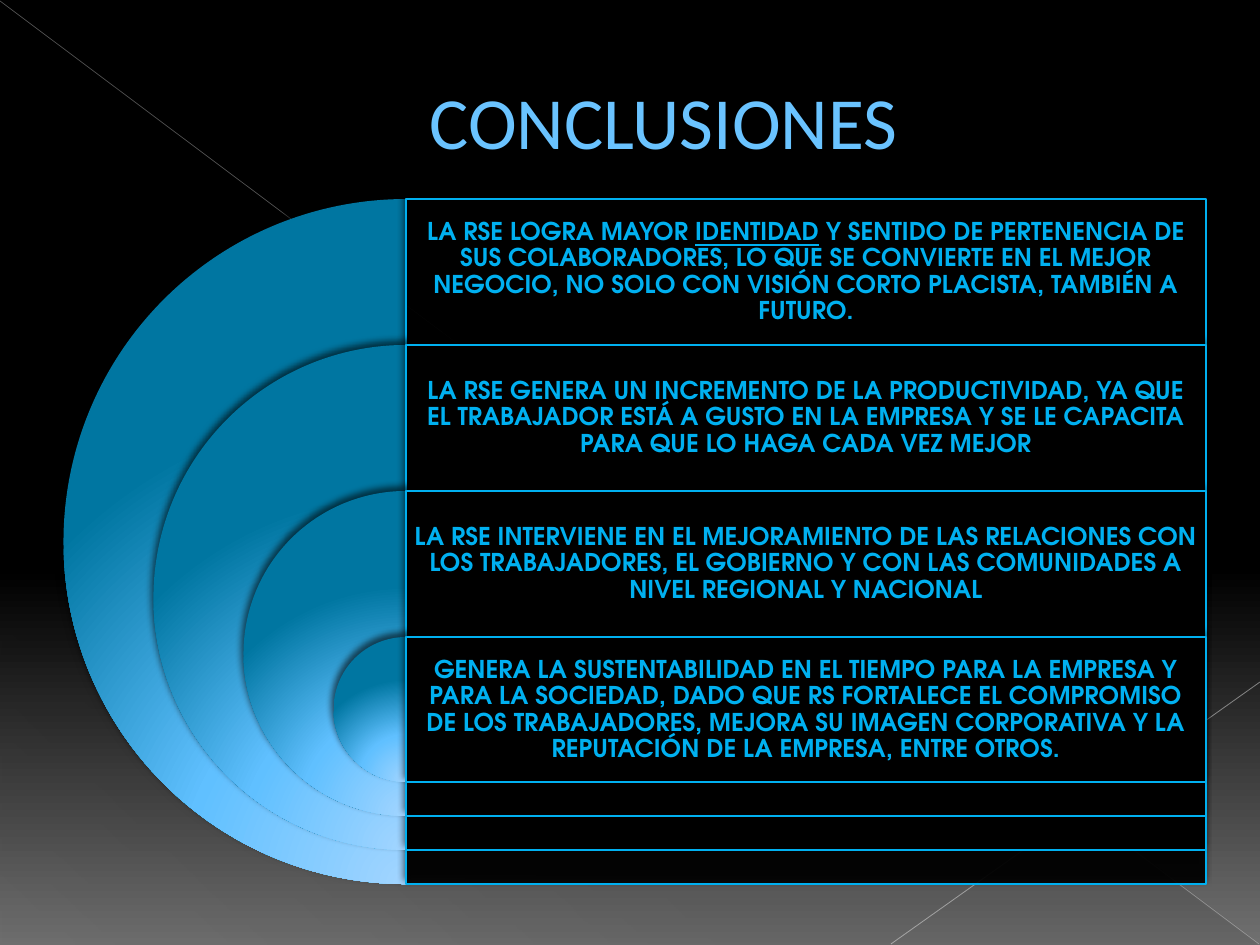
from lxml import etree
from pptx import Presentation, util as u
from pptx.dml.color import RGBColor
from pptx.enum import shapes, text
from pptx.oxml import parse_xml
from pptx.oxml.ns import nsdecls, qn

PX = 914400 / 126  # EMU per px
COLORS = {"black": "000000", "smoke": "707070", "title": "6AC3FF", "rim": "007AA6",
          "text": "00B0F0", "pale": "A2D5FF", "sky": "60C0FF", "deep": "0076A1",
          "ray": "EDEDED", "short ray": "EFEFEF"}
CONCLUSIONS = [
    [("LA RSE LOGRA MAYOR ", False), ("IDENTIDAD", True),
     (" Y SENTIDO DE PERTENENCIA DE SUS COLABORADORES, LO QUE SE CONVIERTE EN EL MEJOR "
      "NEGOCIO, NO SOLO CON VISIÓN CORTO PLACISTA, TAMBIÉN A FUTURO.", False)],
    [("LA RSE GENERA UN INCREMENTO DE LA PRODUCTIVIDAD, YA QUE EL TRABAJADOR ESTÁ A GUSTO "
      "EN LA EMPRESA Y SE LE CAPACITA PARA QUE LO HAGA CADA VEZ MEJOR", False)],
    [("LA RSE INTERVIENE EN EL MEJORAMIENTO DE LAS RELACIONES CON LOS TRABAJADORES, EL "
      "GOBIERNO Y CON LAS COMUNIDADES A NIVEL REGIONAL Y NACIONAL", False)],
    [("GENERA LA SUSTENTABILIDAD EN EL TIEMPO PARA LA EMPRESA Y PARA LA SOCIEDAD, DADO QUE "
      "RS FORTALECE EL COMPROMISO DE LOS TRABAJADORES, MEJORA SU IMAGEN CORPORATIVA Y LA "
      "REPUTACIÓN DE LA EMPRESA, ENTRE OTROS.", False)],
]


def px(*lengths):
    return [u.Emu(round(length * PX)) for length in lengths]


def rgb(name):
    return RGBColor.from_string(COLORS[name])


def add_alpha(parent, percent):
    """Make the colour inside parent partly transparent."""
    color = next(parent.iter(qn("a:srgbClr")))
    etree.SubElement(color, qn("a:alpha"), val=str(percent * 1000))


def set_gradient(owner, stops, direction):
    """Replace the solid fill of owner by a gradient of (position, colour, alpha)."""
    marks = "".join(
        f'<a:gs pos="{position * 1000}"><a:srgbClr val="{COLORS[name]}">'
        f'<a:alpha val="{alpha * 1000}"/></a:srgbClr></a:gs>'
        for position, name, alpha in stops)
    gradient = parse_xml(f'<a:gradFill {nsdecls("a")} rotWithShape="1">'
                         f'<a:gsLst>{marks}</a:gsLst>{direction}</a:gradFill>')
    owner.replace(owner.find(qn("a:solidFill")), gradient)


def linear(degrees):
    return f'<a:lin ang="{degrees * 60000}" scaled="0"/>'


class Slide:
    font = "TeX Gyre Adventor"
    title_font = "Calibri"
    glow = ('<a:path path="circle"><a:fillToRect l="50000" t="155000" r="50000" '
            'b="-55000"/></a:path>')

    def __init__(self, deck):
        self.page = deck.slides.add_slide(deck.slide_layouts[6])

    def background(self, stops):
        self.page.background.fill.solid()
        set_gradient(self.page._element.find(".//" + qn("p:bgPr")), stops, linear(90))

    def shape(self, kind, box, shadow=True):
        shape = self.page.shapes.add_shape(kind, *px(*box))
        shape.shadow.inherit = False
        shape.fill.solid()
        shape.fill.fore_color.rgb = rgb("black")
        shape.line.fill.background()
        if shadow:
            effects = shape._element.spPr.find(qn("a:effectLst"))
            effects.append(parse_xml(
                f'<a:outerShdw {nsdecls("a")} blurRad="50800" dist="38100" '
                f'dir="{245 * 60000}" algn="ctr" rotWithShape="0"><a:srgbClr val="000000">'
                '<a:alpha val="60000"/></a:srgbClr></a:outerShdw>'))
        return shape

    def veil(self, box):
        veil = self.shape(shapes.MSO_SHAPE.RIGHT_TRIANGLE, box, shadow=False)
        set_gradient(veil._element.spPr,
                     [(0, "black", 10), (70, "black", 8), (100, "black", 1)], linear(133))

    def ray(self, start, end, color, width, alpha):
        ray = self.page.shapes.add_connector(shapes.MSO_CONNECTOR.STRAIGHT,
                                             *px(*start, *end))
        ray.line.color.rgb = rgb(color)
        ray.line.width = u.Pt(width)
        properties = ray._element.spPr
        add_alpha(properties, alpha)
        etree.SubElement(properties, qn("a:effectLst"))

    def half_disc(self, box):
        disc = self.shape(shapes.MSO_SHAPE.PIE, box)
        disc.adjustments[0], disc.adjustments[1] = 54, 162
        set_gradient(disc._element.spPr,
                     [(0, "pale", 100), (46, "sky", 100), (100, "deep", 100)], self.glow)

    def panel(self, box):
        panel = self.shape(shapes.MSO_SHAPE.RECTANGLE, box)
        add_alpha(panel._element.spPr.find(qn("a:solidFill")), 90)
        panel.line.color.rgb = rgb("text")
        panel.line.width = u.Pt(0.75)

    def words(self, box, spans, font, size, color, inset):
        frame = self.page.shapes.add_textbox(*px(*box)).text_frame
        frame.word_wrap = True
        frame.vertical_anchor = text.MSO_ANCHOR.MIDDLE
        frame.margin_left, frame.margin_right, frame.margin_top, frame.margin_bottom = (
            px(inset) * 4)
        para = frame.paragraphs[0]
        para.alignment = text.PP_ALIGN.CENTER
        para.font.name, para.font.size = font, u.Pt(size)
        para.font.color.rgb = rgb(color)
        for wording, underlined in spans:
            span = para.add_run()
            span.text = wording
            if underlined:
                span.font.underline = True
        return para

    def title(self, box, wording):
        para = self.words(box, [(wording, False)], self.title_font, 42, "title", 12)
        properties = para._p.get_or_add_pPr()
        properties.set("marL", str(px(67)[0]))
        properties.find(qn("a:defRPr")).insert(0, parse_xml(
            f'<a:ln {nsdecls("a")} w="6350"><a:solidFill>'
            f'<a:srgbClr val="{COLORS["rim"]}"/></a:solidFill></a:ln>'))

    def conclusion(self, box, spans):
        para = self.words(box, spans, self.font, 14, "text", 7)
        para.font.bold = True
        para.line_spacing = 0.9


def main():
    deck = Presentation()
    deck.slide_width, deck.slide_height = px(1260, 945)
    slide = Slide(deck)

    # Backdrop
    slide.background([(0, "black", 100), (60, "black", 100), (100, "smoke", 100)])
    slide.veil((1, 3, 1258, 942))
    slide.ray((0, 1), (1259, 944), "ray", 0.39, 35)
    slide.ray((1260, 682), (891, 944), "short ray", 0.47, 45)

    # Title
    slide.title((63, 26, 1134, 189), "CONCLUSIONES")

    # Nested half discs, each with its panel and conclusion
    center, top, width, row = 406, 199, 800, 146
    largest, shrink = 685, 180
    for level, spans in enumerate(CONCLUSIONS):
        size = largest - shrink * level
        y = top + row * level
        slide.half_disc((center - size / 2, y, size, size))
        slide.panel((center, y, width, size))
        slide.conclusion((center, y, width, row), spans)

    deck.save("out.pptx")


if __name__ == "__main__":
    main()
